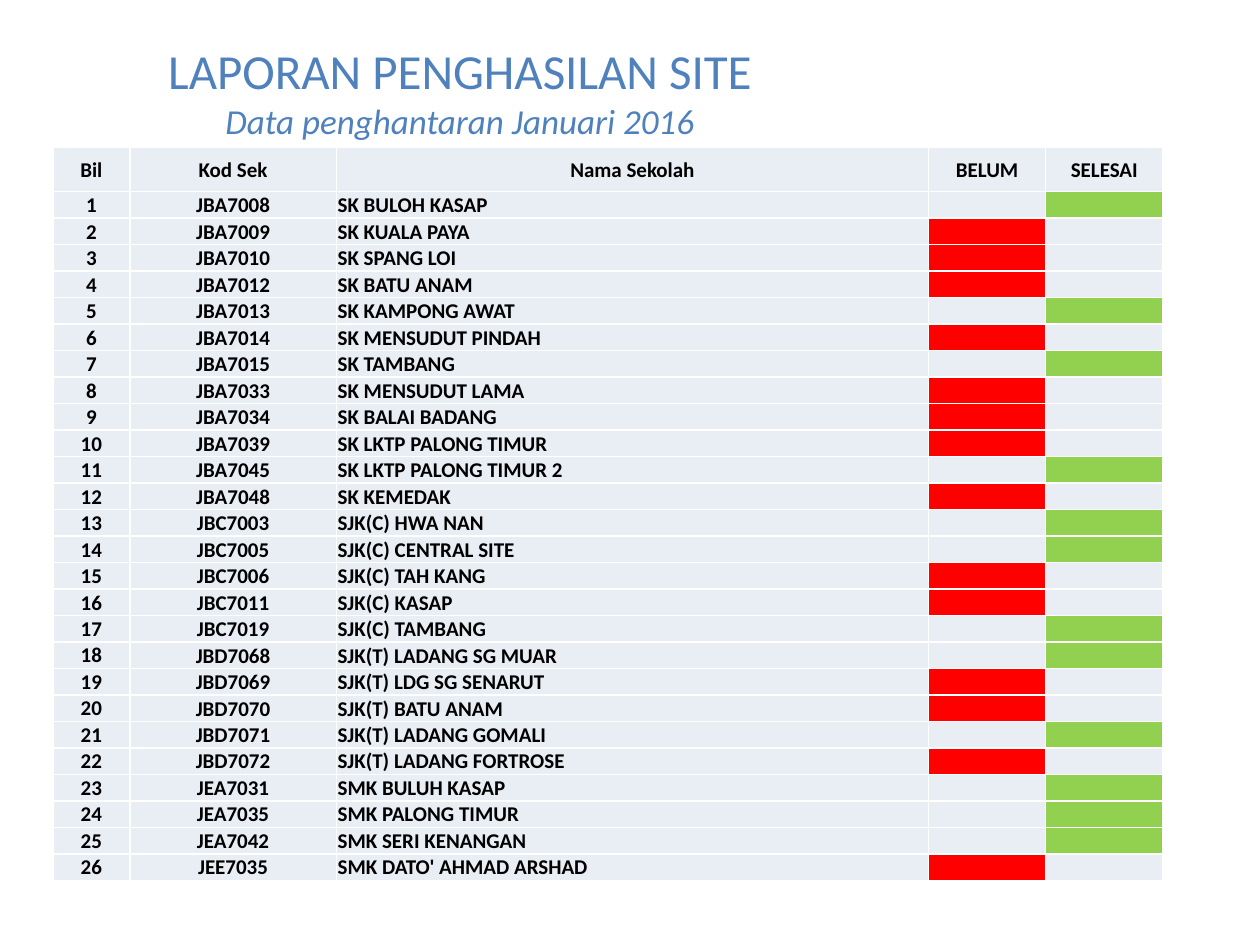
from typing import NamedTuple

from lxml.etree import SubElement
from pptx import Presentation
from pptx.dml.color import RGBColor
from pptx.enum.text import MSO_ANCHOR, MSO_AUTO_SIZE, PP_ALIGN
from pptx.oxml.ns import qn
from pptx.util import Inches, Pt

BLACK = RGBColor(0x00, 0x00, 0x00)
WHITE = RGBColor(0xFF, 0xFF, 0xFF)
BLUE = RGBColor(0x4F, 0x81, 0xBD)
PALE = RGBColor(0xE9, 0xED, 0xF4)
RED = RGBColor(0xFF, 0x00, 0x00)
GREEN = RGBColor(0x92, 0xD0, 0x50)
FONT = "Calibri"
TABLE_SIZE = Pt(12)


class School(NamedTuple):
    code: str
    name: str
    done: bool = False


HEADINGS = ("Bil", "Kod Sek", "Nama Sekolah", "BELUM", "SELESAI")
COLUMN_WIDTHS = (0.61, 1.64, 4.7, 0.93, 0.93)
HEADER_HEIGHT = 0.35
ROW_HEIGHT = 0.21
SCHOOLS = (
    School("JBA7008", "SK BULOH KASAP", done=True),
    School("JBA7009", "SK KUALA PAYA"),
    School("JBA7010", "SK SPANG LOI"),
    School("JBA7012", "SK BATU ANAM"),
    School("JBA7013", "SK KAMPONG AWAT", done=True),
    School("JBA7014", "SK MENSUDUT PINDAH"),
    School("JBA7015", "SK TAMBANG", done=True),
    School("JBA7033", "SK MENSUDUT LAMA"),
    School("JBA7034", "SK BALAI BADANG"),
    School("JBA7039", "SK LKTP PALONG TIMUR"),
    School("JBA7045", "SK LKTP PALONG TIMUR 2", done=True),
    School("JBA7048", "SK KEMEDAK"),
    School("JBC7003", "SJK(C) HWA NAN", done=True),
    School("JBC7005", "SJK(C) CENTRAL SITE", done=True),
    School("JBC7006", "SJK(C) TAH KANG"),
    School("JBC7011", "SJK(C) KASAP"),
    School("JBC7019", "SJK(C) TAMBANG", done=True),
    School("JBD7068", "SJK(T) LADANG SG MUAR", done=True),
    School("JBD7069", "SJK(T) LDG SG SENARUT"),
    School("JBD7070", "SJK(T) BATU ANAM"),
    School("JBD7071", "SJK(T) LADANG GOMALI", done=True),
    School("JBD7072", "SJK(T) LADANG FORTROSE"),
    School("JEA7031", "SMK BULUH KASAP", done=True),
    School("JEA7035", "SMK PALONG TIMUR", done=True),
    School("JEA7042", "SMK SERI KENANGAN", done=True),
    School("JEE7035", "SMK DATO' AHMAD ARSHAD"),
)


def add_borders(cell) -> None:
    properties = cell._tc.get_or_add_tcPr()
    for side in ("lnL", "lnR", "lnT", "lnB"):
        line = SubElement(properties, qn(f"a:{side}"), w=str(Pt(1)))
        fill = SubElement(line, qn("a:solidFill"))
        SubElement(fill, qn("a:srgbClr"), val=str(WHITE))


def format_cell(cell, text: str = "", color: RGBColor = PALE,
                align: PP_ALIGN = PP_ALIGN.CENTER,
                anchor: MSO_ANCHOR = MSO_ANCHOR.MIDDLE) -> None:
    add_borders(cell)
    cell.fill.solid()
    cell.fill.fore_color.rgb = color
    cell.margin_left = cell.margin_right = cell.margin_top = Inches(0.01)
    cell.margin_bottom = 0
    cell.vertical_anchor = anchor
    para = cell.text_frame.paragraphs[0]
    if not text:
        # An empty cell would otherwise stretch its row to the default text size
        SubElement(para._p, qn("a:endParaRPr"), sz=str(int(TABLE_SIZE.pt * 100)))
        return
    para.text = text
    para.alignment = align
    font = para.runs[0].font
    font.name, font.size, font.bold = FONT, TABLE_SIZE, True
    font.color.rgb = BLACK


def add_title(page) -> None:
    title = page.shapes.title
    title.left, title.top = Inches(0.12), Inches(0.27)
    title.width, title.height = Inches(7.06), Inches(0.91)
    frame = title.text_frame
    frame.text = "LAPORAN PENGHASILAN SITE\nData penghantaran Januari 2016"
    frame.word_wrap = True
    frame.auto_size = MSO_AUTO_SIZE.SHAPE_TO_FIT_TEXT
    frame.vertical_anchor = MSO_ANCHOR.TOP
    for para, size, italic in zip(frame.paragraphs, (28, 20), (False, True)):
        para.alignment = PP_ALIGN.CENTER
        font = para.runs[0].font
        font.name, font.size, font.italic = FONT, Pt(size), italic
        font.color.rgb = BLUE


def add_school_table(page) -> None:
    height = HEADER_HEIGHT + ROW_HEIGHT * len(SCHOOLS)
    table = page.shapes.add_table(
        len(SCHOOLS) + 1, len(HEADINGS), Inches(0.42), Inches(1.17),
        Inches(sum(COLUMN_WIDTHS)), Inches(height)).table
    table.horz_banding = False
    for column, width in zip(table.columns, COLUMN_WIDTHS):
        column.width = Inches(width)
    for row in table.rows:
        row.height = Inches(ROW_HEIGHT)
    table.rows[0].height = Inches(HEADER_HEIGHT)

    for column, heading in enumerate(HEADINGS):
        format_cell(table.cell(0, column), heading)
    for number, school in enumerate(SCHOOLS, start=1):
        serial, code, name, pending, finished = table.rows[number].cells
        format_cell(serial, str(number), anchor=MSO_ANCHOR.BOTTOM)
        format_cell(code, school.code)
        format_cell(name, school.name, align=PP_ALIGN.LEFT)
        format_cell(pending, color=PALE if school.done else RED)
        format_cell(finished, color=GREEN if school.done else PALE)


def main() -> None:
    deck = Presentation()
    deck.slide_width, deck.slide_height = Inches(10), Inches(7.5)
    page = deck.slides.add_slide(deck.slide_layouts.get_by_name("Title Only"))
    add_title(page)
    add_school_table(page)
    deck.save("out.pptx")


if __name__ == "__main__":
    main()
